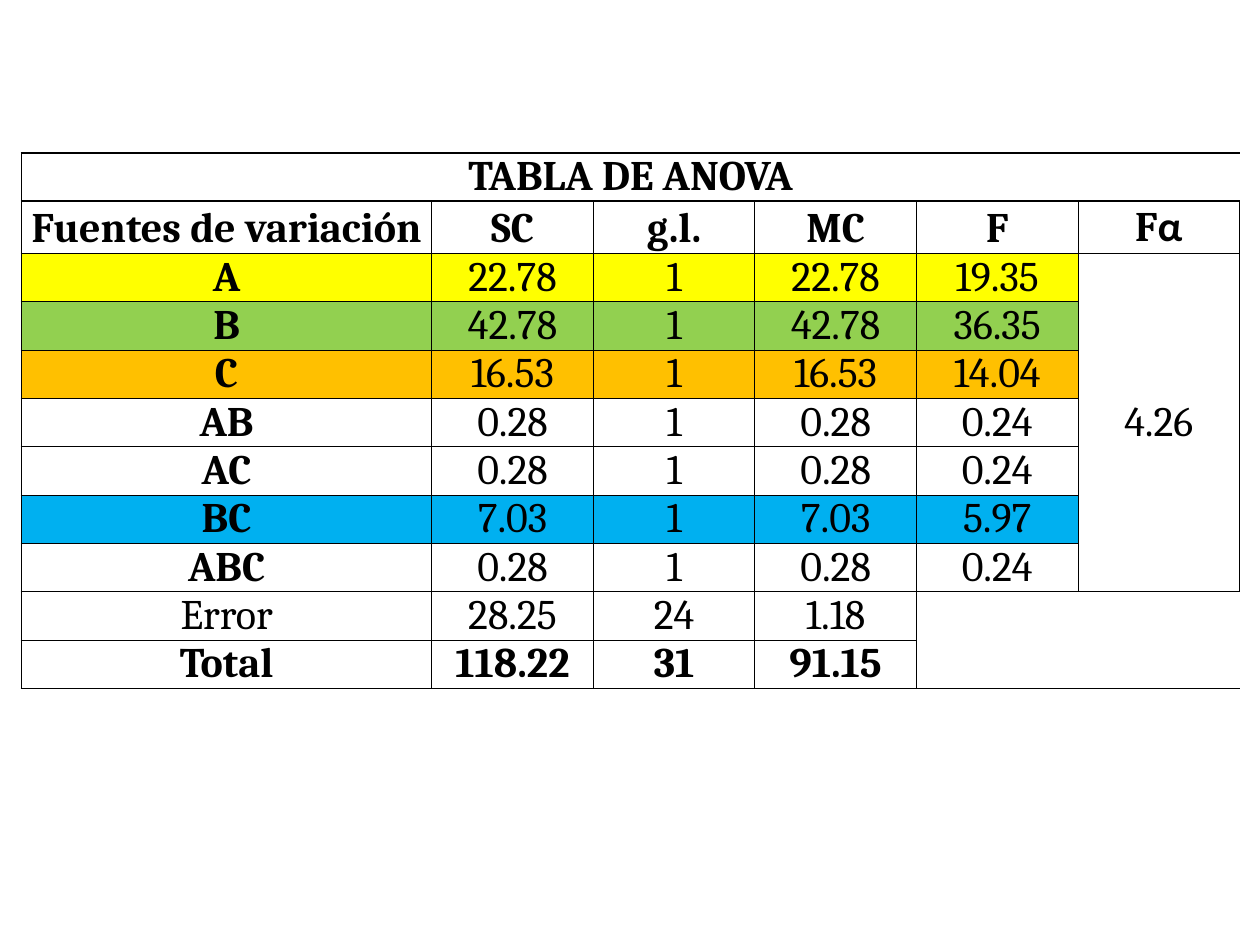
from lxml.etree import SubElement
from pptx import Presentation
from pptx.dml.color import RGBColor
from pptx.enum.text import MSO_ANCHOR, PP_ALIGN
from pptx.oxml.ns import qn
from pptx.util import Inches, Pt

COLORS = {
    "ink": "000000",
    "A": "FFFF00",
    "B": "92D050",
    "C": "FFC000",
    "BC": "00B0F0",
}
PLAIN_STYLE = "{2D5ABB26-0587-4C30-8999-92F81FD0307C}"
COLUMN_WIDTHS = [1.67, 1.58] + [1.28] * 5
ROW_HEIGHTS = [0.38, 0.38, 0.41] + [0.38] * 9 + [0.57]
TITLE_ROW, HEADER_ROW, FIRST_SOURCE_ROW, ERROR_ROW, TOTAL_ROW = 1, 2, 3, 10, 11
LAST_COLUMN = 6
HEADINGS = ["SC", "g.l.", "MC", "F"]
SOURCES = [
    ("A", "22.78", "1", "22.78", "19.35"),
    ("B", "42.78", "1", "42.78", "36.35"),
    ("C", "16.53", "1", "16.53", "14.04"),
    ("AB", "0.28", "1", "0.28", "0.24"),
    ("AC", "0.28", "1", "0.28", "0.24"),
    ("BC", "7.03", "1", "7.03", "5.97"),
    ("ABC", "0.28", "1", "0.28", "0.24"),
    ("Error", "28.25", "24", "1.18"),
    ("Total", "118.22", "31", "91.15"),
]


def write_text(paragraph, text, font="Cambria", size=24, bold=False, color="ink"):
    paragraph.alignment = PP_ALIGN.CENTER
    run = paragraph.add_run()
    run.text = text
    run.font.name = font
    run.font.size = Pt(size)
    run.font.bold = bold
    run.font.color.rgb = RGBColor.from_string(COLORS[color])


def draw_border(cell, side, points):
    properties = cell._tc.get_or_add_tcPr()
    line = SubElement(properties, qn(f"a:ln{side}"), w=str(Pt(points)))
    fill = SubElement(line, qn("a:solidFill"))
    SubElement(fill, qn("a:srgbClr"), val=COLORS["ink"])


def fill_region(table, row, column, text="", rows=1, columns=1, shade=None,
                anchor=MSO_ANCHOR.BOTTOM, **text_format):
    bottom, right = row + rows - 1, column + columns - 1
    first = table.cell(row, column)
    if rows * columns > 1:
        first.merge(table.cell(bottom, right))
    for r in range(row, bottom + 1):
        for c in range(column, right + 1):
            cell = table.cell(r, c)
            edges = [
                ("L", c == column, c == 0),
                ("R", c == right, c == LAST_COLUMN),
                ("T", r == row, r in (TITLE_ROW, HEADER_ROW)),
                ("B", r == bottom, r in (TITLE_ROW, TOTAL_ROW)),
            ]
            for side, on_edge, outer in edges:
                if on_edge:
                    draw_border(cell, side, 1 if outer else 0.5)
            if shade:
                cell.fill.solid()
                cell.fill.fore_color.rgb = RGBColor.from_string(shade)
    first.vertical_anchor = anchor
    if text:
        write_text(first.text_frame.paragraphs[0], text, **text_format)


def add_anova_table(slide, left, top, width, height):
    frame = slide.shapes.add_table(
        len(ROW_HEIGHTS), len(COLUMN_WIDTHS), left, top, width, height)
    table = frame.table
    table.first_row = table.horz_banding = False
    table._tbl.tblPr.find(qn("a:tableStyleId")).text = PLAIN_STYLE
    for table_column, share in zip(table.columns, COLUMN_WIDTHS):
        table_column.width = int(width * share / sum(COLUMN_WIDTHS))
    for table_row, share in zip(table.rows, ROW_HEIGHTS):
        table_row.height = int(height * share / sum(ROW_HEIGHTS))
    for cell in table.iter_cells():
        cell.margin_left = cell.margin_right = 0
        cell.margin_top = cell.margin_bottom = 0

    fill_region(table, TITLE_ROW, 0, "TABLA DE ANOVA", columns=7, bold=True)
    fill_region(table, HEADER_ROW, 0, "Fuentes de variación", columns=2, bold=True)
    for column, heading in enumerate(HEADINGS, start=2):
        fill_region(table, HEADER_ROW, column, heading, bold=True)
    fill_region(table, HEADER_ROW, LAST_COLUMN, "F", bold=True)
    critical_heading = table.cell(HEADER_ROW, LAST_COLUMN).text_frame.paragraphs[0]
    write_text(critical_heading, "α", font="Calibri", bold=True)

    for row, (source, *values) in enumerate(SOURCES, start=FIRST_SOURCE_ROW):
        shade = COLORS.get(source)
        fill_region(table, row, 0, source, columns=2, shade=shade,
                    bold=source != "Error")
        for column, value in enumerate(values, start=2):
            fill_region(table, row, column, value, shade=shade,
                        bold=source == "Total")

    fill_region(table, FIRST_SOURCE_ROW, LAST_COLUMN, "4.26", rows=7,
                anchor=MSO_ANCHOR.MIDDLE)
    fill_region(table, ERROR_ROW, 5, rows=2, columns=2)


def main():
    presentation = Presentation()
    presentation.slide_width = Inches(10)
    presentation.slide_height = Inches(7.5)
    slide = presentation.slides.add_slide(presentation.slide_layouts[6])
    add_anova_table(slide, Inches(0.17), Inches(0.83), Inches(9.67), Inches(5.2))
    presentation.save("out.pptx")


if __name__ == "__main__":
    main()
